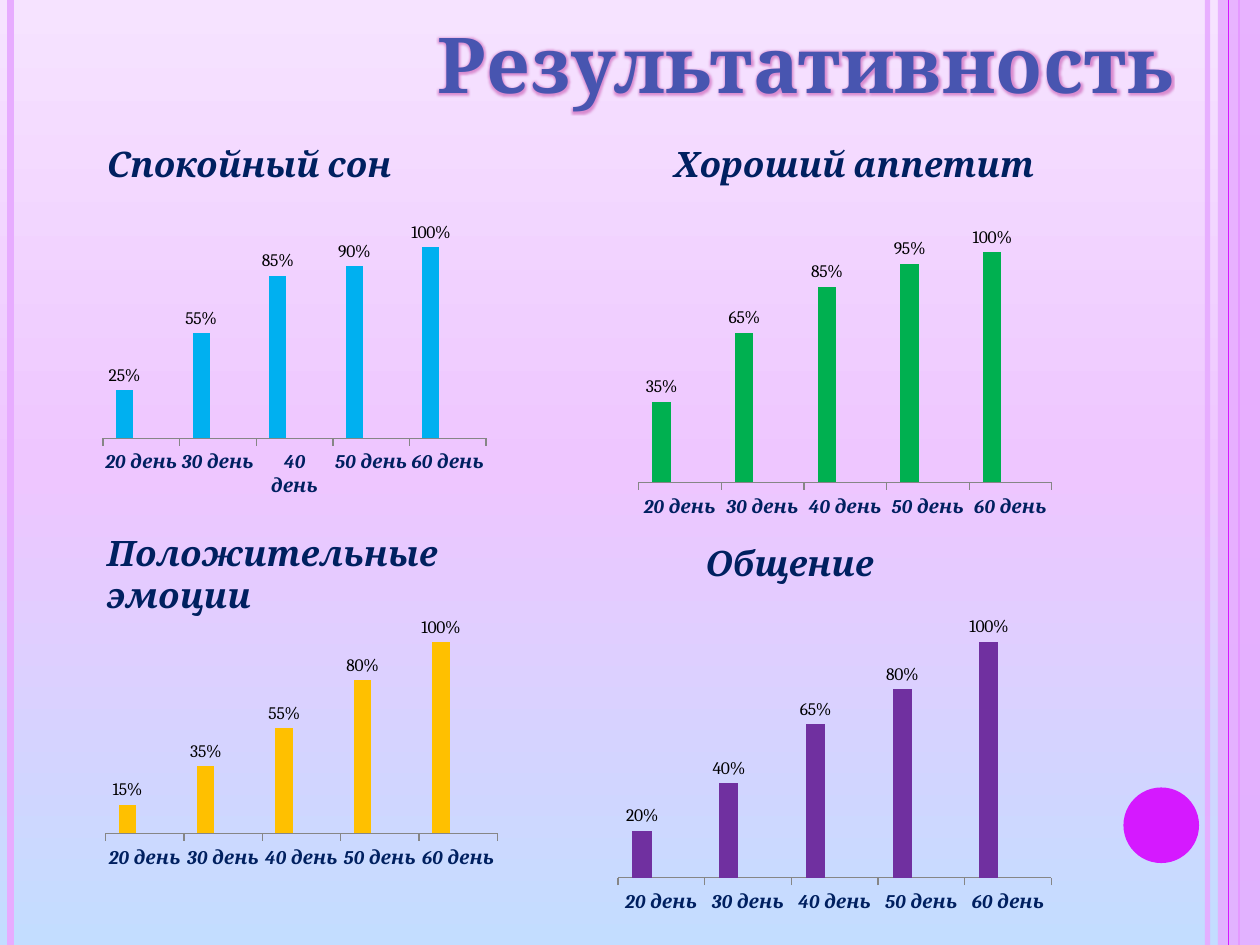
from dataclasses import dataclass
from typing import Optional

from pptx import Presentation
from pptx.chart import data
from pptx.dml.color import RGBColor
from pptx.enum import chart as ce, shapes, text
from pptx.oxml import parse_xml
from pptx.oxml.ns import nsdecls, qn
from pptx.util import Pt

FONT = "Cambria"
NAVY, LILAC, PINK = "002060", "E7ACFF", "D519FF"
DAYS = [f"{n} день" for n in range(20, 70, 10)]


@dataclass
class Box:
    x: float
    y: float
    w: float
    h: float

    def pts(self) -> tuple:
        return Pt(self.x), Pt(self.y), Pt(self.w), Pt(self.h)


@dataclass
class Panel:
    head: str
    label: Box
    plot: Box
    color: str
    vals: list
    inner: Optional[tuple] = None  # x, y, w, h as shares of the chart


PANELS = [
    Panel("Спокойный сон", Box(54, 78, 210, 31.5), Box(54, 108, 246, 190),
          "00B0F0", [0.25, 0.55, 0.85, 0.9, 1], (0.02, 0.06, 0.89, 0.69)),
    Panel("Хороший аппетит", Box(378, 78, 234, 31.5), Box(360, 114, 246, 186),
          "00B050", [0.35, 0.65, 0.85, 0.95, 1]),
    Panel("Общение", Box(396, 306, 186, 31.5), Box(348, 336, 258, 190),
          "7030A0", [0.2, 0.4, 0.65, 0.8, 1]),
    Panel("Положительные эмоции", Box(54, 300, 234, 55.5), Box(60, 330, 252, 190),
          "FFC000", [0.15, 0.35, 0.55, 0.8, 1], (0, 0.08, 0.89, 0.69)),
]


def rgb(code: str) -> RGBColor:
    return RGBColor.from_string(code)


def grad(stops: list, angle: int):
    """Return a linear gradient fill element; stops are (percent, colour)."""
    marks = "".join(f'<a:gs pos="{pos * 1000}"><a:srgbClr val="{code}"/></a:gs>'
                    for pos, code in stops)
    return parse_xml(f'<a:gradFill {nsdecls("a")} rotWithShape="1"><a:gsLst>{marks}'
                     f'</a:gsLst><a:lin ang="{angle * 60000}" scaled="0"/></a:gradFill>')


def swap_fill(root, new) -> None:
    """Put a new fill where the first solid fill stands."""
    old = next(root.iter(qn("a:solidFill")))
    old.getparent().replace(old, new)


def fade(root, share: int) -> None:
    """Set the opacity, in percent, of the first colour."""
    tint = next(root.iter(qn("a:srgbClr")))
    tint.append(parse_xml(f'<a:alpha {nsdecls("a")} val="{share * 1000}"/>'))


def add_bar(slide, x: float, width: float, color: str, share: int = 100) -> None:
    line = slide.shapes.add_connector(
        shapes.MSO_CONNECTOR.STRAIGHT, Pt(x), Pt(0), Pt(x), Pt(540))
    line.line.width = Pt(width)
    line.line.color.rgb = rgb(color)
    if share < 100:
        fade(line.line._ln, share)
    line._element.spPr.append(parse_xml(f'<a:effectLst {nsdecls("a")}/>'))


def add_shape(slide, kind, box: Box, color: str, share: int = 100) -> None:
    shape = slide.shapes.add_shape(kind, *box.pts())
    shape.shadow.inherit = False
    shape.fill.solid()
    shape.fill.fore_color.rgb = rgb(color)
    shape.line.fill.background()
    if share < 100:
        fade(shape._element.spPr, share)


def add_text(slide, words: str, box: Box, size: float, italic: bool = True):
    frame = slide.shapes.add_textbox(*box.pts()).text_frame
    frame.word_wrap = True
    para = frame.paragraphs[0]
    para.text = words
    set_font(para.font, size, NAVY, True, italic)
    return frame


def set_font(font, size: float, color: str, bold: bool = False,
             italic: bool = False) -> None:
    font.name, font.size = FONT, Pt(size)
    font.bold, font.italic = bold, italic
    font.color.rgb = rgb(color)


def add_title(slide) -> None:
    frame = add_text(slide, "Результативность", Box(48, 12, 630, 54), 44, False)
    frame.vertical_anchor = text.MSO_ANCHOR.BOTTOM
    para = frame.paragraphs[0]
    para.alignment = text.PP_ALIGN.RIGHT
    font = para.runs[0].font
    set_font(font, 44, "4855B0", True)
    props = font._element
    swap_fill(props, grad([(0, "5661B3"), (25, "4855B0"), (50, "003196"),
                           (75, "4855B0"), (100, "5661B3")], 90))
    props.insert(1, parse_xml(
        f'<a:effectLst {nsdecls("a")}><a:glow rad="{Pt(4)}"><a:srgbClr val="D070C0">'
        '<a:alpha val="75000"/></a:srgbClr></a:glow></a:effectLst>'))


def place_plot(chart, inner: tuple) -> None:
    """Fix the inner plot area at the given shares of the chart."""
    area = chart._chartSpace.chart.plotArea
    for old in area.findall(qn("c:layout")):
        area.remove(old)
    spots = "".join(f'<c:{tag} val="{val}"/>' for tag, val in zip("xywh", inner))
    area.insert(0, parse_xml(
        f'<c:layout {nsdecls("c")}><c:manualLayout><c:layoutTarget val="inner"/>'
        f'<c:xMode val="edge"/><c:yMode val="edge"/>{spots}</c:manualLayout></c:layout>'))


def add_chart(slide, panel: Panel) -> None:
    table = data.CategoryChartData(number_format="0%")
    table.categories = DAYS
    table.add_series("Series 1", panel.vals)
    for name in ("Series 2", "Series 3"):
        table.add_series(name, [None] * len(DAYS))
    chart = slide.shapes.add_chart(
        ce.XL_CHART_TYPE.COLUMN_CLUSTERED, *panel.plot.pts(), table).chart
    chart.has_legend = chart.has_title = False
    set_font(chart.font, 10, "000000")

    plot = chart.plots[0]
    plot.gap_width, plot.overlap, plot.vary_by_categories = 150, 0, False
    for series, color in zip(plot.series, (panel.color, "7030A0", "9C007F")):
        series.format.fill.solid()
        series.format.fill.fore_color.rgb = rgb(color)
    tags = plot.series[0].data_labels
    tags.show_value = True
    tags.number_format, tags.number_format_is_linked = "0%", False
    tags.position = ce.XL_LABEL_POSITION.OUTSIDE_END

    vert, base = chart.value_axis, chart.category_axis
    vert.visible = vert.has_major_gridlines = False
    vert.minimum_scale, vert.maximum_scale = 0, 1.2
    vert.tick_labels.number_format = "0%"
    vert.tick_labels.number_format_is_linked = False
    base.major_tick_mark = ce.XL_TICK_MARK.OUTSIDE
    base.format.line.color.rgb = rgb("868686")
    base.format.line.width = Pt(0.75)
    set_font(base.tick_labels.font, 11, NAVY, True, True)
    if panel.inner:
        place_plot(chart, panel.inner)


def main() -> None:
    deck = Presentation()
    deck.slide_width, deck.slide_height = Pt(720), Pt(540)
    slide = deck.slides.add_slide(deck.slide_layouts[6])
    slide.background.fill.solid()
    swap_fill(slide._element, grad(
        [(0, "C3DDFF"), (50, "EEC6FF"), (100, "F6E3FF")], 270))

    add_bar(slide, 690, 3, LILAC, 93)
    add_bar(slide, 6, 4.5, LILAC)
    add_bar(slide, 708, 1.5, PINK)
    add_shape(slide, shapes.MSO_SHAPE.RECTANGLE, Box(696, 0, 24, 540), LILAC, 87)
    add_bar(slide, 702, 0.75, PINK)
    add_shape(slide, shapes.MSO_SHAPE.OVAL, Box(642, 450, 43.2, 43.2), PINK)
    add_title(slide)
    for panel in PANELS:
        frame = add_text(slide, panel.head, panel.label, 20)
        frame.auto_size = text.MSO_AUTO_SIZE.SHAPE_TO_FIT_TEXT
    for panel in PANELS:
        add_chart(slide, panel)
    deck.save("out.pptx")


if __name__ == "__main__":
    main()
